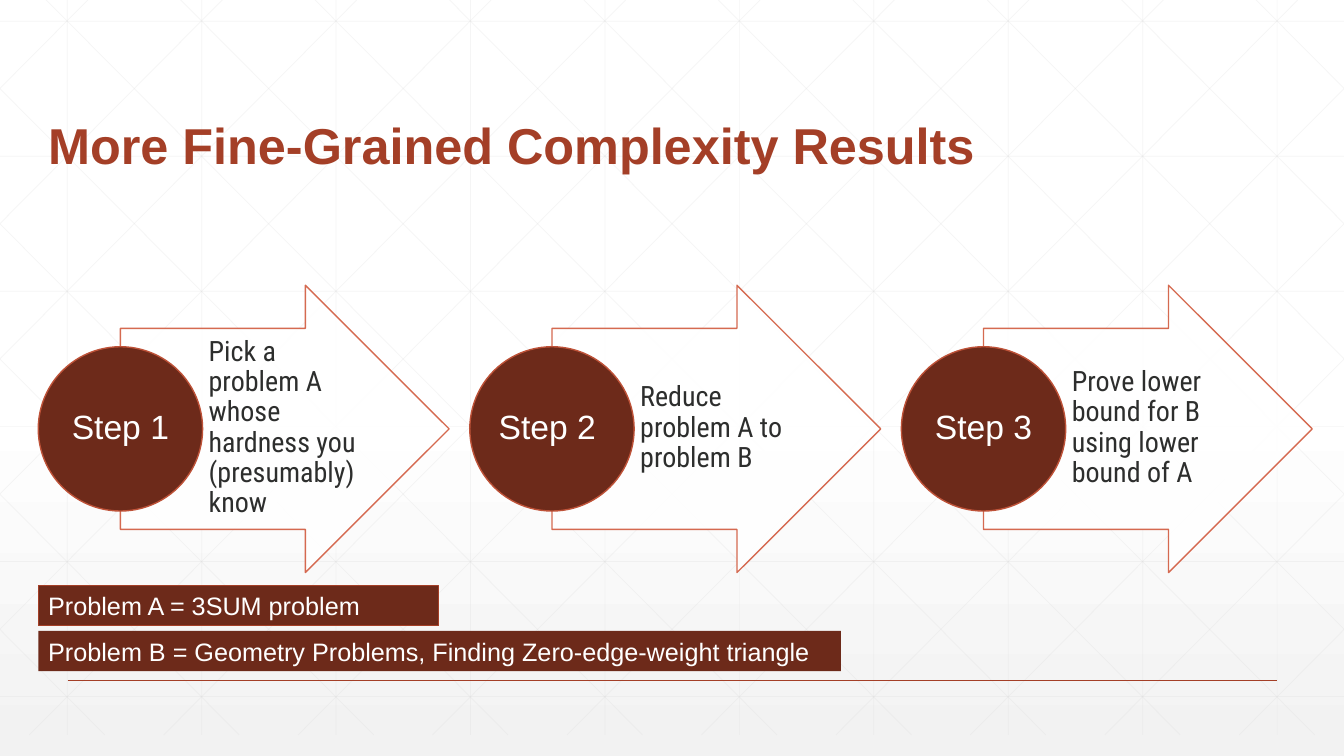
from copy import deepcopy
from pptx import Presentation
from pptx import util as u
from pptx.dml import color as c
from pptx.enum import shapes, text
from pptx.oxml import ns, xmlchemy as x

HUES = {"white": "FFFFFF", "haze": "F2F2F2", "grid": "D9D9D9", "rust": "A43F27",
        "arrow": "D15A3E", "ring": "BE5238", "dark": "6D2A1A", "ink": "2D2E2D"}
WIDE, HIGH = 13.33, 7.5
STEPS = [("Step 1", "Pick a problem A whose hardness you (presumably) know"),
         ("Step 2 ", "Reduce problem A to problem B"),
         ("Step 3", "Prove lower bound for B using lower bound of A")]
NOTES = [("Problem A = 3SUM problem", 3.97, "rust"),
         ("Problem B = Geometry Problems, Finding Zero-edge-weight triangle", 7.96, None)]


def hue(name):
    return c.RGBColor.from_string(HUES[name])


def fade(fill, share):
    tint = fill.find(".//" + ns.qn("a:srgbClr"))
    node = x.OxmlElement("a:alpha")
    node.set("val", str(share * 1000))
    tint.append(node)


def draw_line(slide, start, end, name, width, share=100):
    line = slide.shapes.add_connector(
        shapes.MSO_CONNECTOR.STRAIGHT, *[u.Inches(v) for v in (*start, *end)])
    line.line.color.rgb = hue(name)
    line.line.width = u.Pt(width)
    props = line.element.spPr
    if share < 100:
        fade(props.find(ns.qn("a:ln")), share)
    props.append(x.OxmlElement("a:effectLst"))


def add_form(slide, kind, box, fill, edge, width=1):
    form = slide.shapes.add_shape(kind, *[u.Inches(v) for v in box])
    form.shadow.inherit = False
    form.fill.solid()
    form.fill.fore_color.rgb = hue(fill)
    if edge:
        form.line.color.rgb = hue(edge)
        form.line.width = u.Pt(width)
    else:
        form.line.fill.background()
    return form


def write(form, words, size, name, font="Arial", bold=False, anchor="MIDDLE",
          align="LEFT", inset=(0.1, 0.05, 0.1, 0.05), lead=0.9):
    frame = form.text_frame
    frame.word_wrap = True
    frame.vertical_anchor = text.MSO_ANCHOR[anchor]
    (frame.margin_left, frame.margin_top,
     frame.margin_right, frame.margin_bottom) = [u.Inches(v) for v in inset]
    para = frame.paragraphs[0]
    para.alignment = text.PP_ALIGN[align]
    para.line_spacing = lead
    run = para.add_run()
    run.text = words
    run.font.size = u.Pt(size)
    run.font.name = font
    run.font.bold = bold
    run.font.color.rgb = hue(name)


def add_text(slide, box, *args, **looks):
    write(slide.shapes.add_textbox(*[u.Inches(v) for v in box]), *args, **looks)


def paint_back(slide):
    fill = slide.background.fill
    fill.gradient()
    fill.gradient_angle = 270
    stops = slide.element.find(".//" + ns.qn("a:gsLst"))
    stops.insert(1, deepcopy(stops[0]))
    marks = [(0, "white"), (0.53, "white"), (1, "haze")]
    for stop, (place, name) in zip(fill.gradient_stops, marks):
        stop.position = place
        stop.color.rgb = hue(name)


def draw_grid(slide, wide, low):
    gap, slope, rise = 4 / 3, 1.006, 0.21
    for col in range(10):
        left = gap * (col + 0.5)
        draw_line(slide, (left, 0), (left, low), "grid", 0.5, 25)
    for row in range(6):
        top = rise + 1.34 * row
        draw_line(slide, (0, top), (wide, top), "grid", 0.5, 25)
    for step in range(-5, 10):
        base = 0.25 + gap * step
        top = max(0, -rise - base * slope)
        end = min(low, (wide - base) * slope - rise)
        near, far = [base + (y + rise) / slope for y in (top, end)]
        draw_line(slide, (near, top), (far, end), "grid", 0.5, 25)
        draw_line(slide, (wide - near, top), (wide - far, end), "grid", 0.5, 25)


def draw_step(slide, left, top, label, words):
    disc, wide, high = 1.63, 3.26, 2.85
    arrow = add_form(slide, shapes.MSO_SHAPE.RIGHT_ARROW,
                     (left + disc / 2, top, wide, high), "white", "arrow")
    arrow.adjustments[0], arrow.adjustments[1] = 0.7, 0.5
    props = arrow.element.spPr
    fade(props.find(ns.qn("a:solidFill")), 90)
    fade(props.find(ns.qn("a:ln")), 90)
    add_text(slide, (left + disc, top + 0.42, 1.59, 1.99), words, 20, "ink",
             font="Roboto Condensed", inset=(0.06, 0.01, 0.03, 0.01))
    circle = add_form(slide, shapes.MSO_SHAPE.OVAL,
                      (left, top + (high - disc) / 2, disc, disc), "dark", "ring")
    write(circle, label, 24, "white", align="CENTER", inset=(0.02,) * 4)


def draw_notes(slide, left, top):
    for row, (words, wide, edge) in enumerate(NOTES):
        note = add_form(slide, shapes.MSO_SHAPE.RECTANGLE,
                        (left, top + 0.45 * row, wide, 0.4), "dark", edge, 0.75)
        write(note, words, 18, "white", anchor="TOP", lead=1.0)


def main():
    deck = Presentation()
    deck.slide_width, deck.slide_height = u.Inches(WIDE), u.Inches(HIGH)
    slide = deck.slides.add_slide(deck.slide_layouts[6])
    paint_back(slide)
    draw_grid(slide, WIDE, 7.29)
    draw_line(slide, (0.67, 6.75), (12.67, 6.75), "rust", 1)
    add_text(slide, (0.38, 0.54, 10.5, 1.25), "More Fine-Grained Complexity Results",
             36, "rust", bold=True, anchor="BOTTOM")
    for place, (label, words) in enumerate(STEPS):
        draw_step(slide, 0.38 + 4.28 * place, 2.83, label, words)
    draw_notes(slide, 0.38, 5.81)
    deck.save("out.pptx")


if __name__ == "__main__":
    main()
